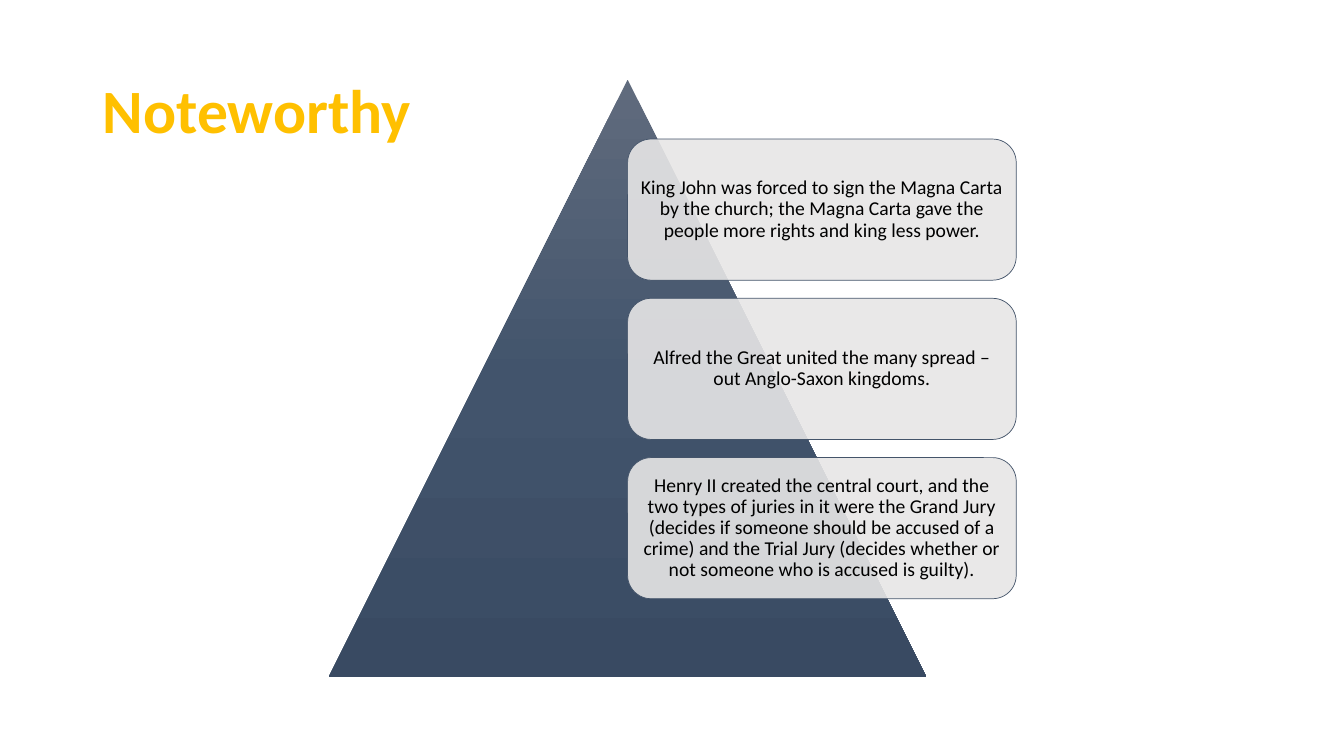
from copy import deepcopy

from lxml import etree
from pptx import Presentation
from pptx.dml.color import RGBColor
from pptx.enum.shapes import MSO_SHAPE
from pptx.enum.text import MSO_ANCHOR, PP_ALIGN
from pptx.oxml.ns import qn
from pptx.util import Inches, Pt

TRIANGLE = MSO_SHAPE.ISOSCELES_TRIANGLE
ROUNDED = MSO_SHAPE.ROUNDED_RECTANGLE
MIDDLE = MSO_ANCHOR.MIDDLE
LEFT, CENTER = PP_ALIGN.LEFT, PP_ALIGN.CENTER

GOLD = RGBColor(0xFF, 0xC0, 0x00)
BLACK = RGBColor(0x00, 0x00, 0x00)
GREY = RGBColor(0xE7, 0xE6, 0xE6)
SLATE = RGBColor(0x44, 0x54, 0x6A)
SHADES = [
    (0, RGBColor(0x60, 0x6B, 0x7D)),
    (0.5, RGBColor(0x42, 0x54, 0x6C)),
    (1, RGBColor(0x39, 0x4A, 0x62)),
]
FONT = "Calibri"

FACTS = [
    "King John was forced to sign the Magna Carta by the church; "
    "the Magna Carta gave the people more rights and king less power.",
    "Alfred the Great united the many spread – out Anglo-Saxon kingdoms.",
    "Henry II created the central court, and the two types of juries in it "
    "were the Grand Jury (decides if someone should be accused of a crime) "
    "and the Trial Jury (decides whether or not someone who is accused is "
    "guilty).",
]


def write(frame, text, size, color, align, bold=False):
    frame.text = text
    frame.word_wrap = True
    frame.vertical_anchor = MIDDLE
    para = frame.paragraphs[0]
    para.alignment = align
    para.line_spacing = 0.9
    font = para.runs[0].font
    font.name, font.size, font.bold = FONT, Pt(size), bold
    font.color.rgb = color


def add_title(slide, text, left, top, width, height):
    title = slide.shapes.title
    title.left, title.top = Inches(left), Inches(top)
    title.width, title.height = Inches(width), Inches(height)
    write(title.text_frame, text, 44, GOLD, LEFT, bold=True)


def add_peak(slide, left, top, side):
    peak = slide.shapes.add_shape(
        TRIANGLE, Inches(left), Inches(top), Inches(side), Inches(side))
    peak.shadow.inherit = False
    peak.line.fill.background()
    peak.fill.gradient()
    peak.fill.gradient_angle = 270
    # A third stop joins the two default ones
    stops = peak._element.spPr.find(".//" + qn("a:gsLst"))
    stops.append(deepcopy(stops[0]))
    for stop, (place, color) in zip(peak.fill.gradient_stops, SHADES):
        stop.position = place
        stop.color.rgb = color


def add_card(slide, text, left, top, width, height):
    card = slide.shapes.add_shape(
        ROUNDED, Inches(left), Inches(top), Inches(width), Inches(height))
    card.shadow.inherit = False
    card.fill.solid()
    card.fill.fore_color.rgb = GREY
    # Let the peak show through
    color = card._element.spPr.find(qn("a:solidFill"))[0]
    etree.SubElement(color, qn("a:alpha"), val="90000")
    card.line.color.rgb = SLATE
    card.line.width = Pt(0.5)
    frame = card.text_frame
    frame.margin_left = frame.margin_right = Inches(0.06)
    frame.margin_top = frame.margin_bottom = Inches(0.06)
    write(frame, text, 14, BLACK, CENTER)


def add_pyramid(slide, left, top, side):
    add_peak(slide, left, top, side)
    # Cards start on the centre line of the peak
    height = 1.4
    step = height + 0.18
    for row, fact in enumerate(FACTS):
        add_card(slide, fact, left + side / 2, top + 0.59 + row * step,
                 side * 0.65, height)


def main():
    deck = Presentation()
    deck.slide_width, deck.slide_height = Inches(13.33), Inches(7.5)
    slide = deck.slides.add_slide(deck.slide_layouts[5])
    add_title(slide, "Noteworthy", 0.92, 0.4, 11.5, 1.45)
    add_pyramid(slide, 3.26, 0.79, 5.93)
    deck.save("out.pptx")


if __name__ == "__main__":
    main()
